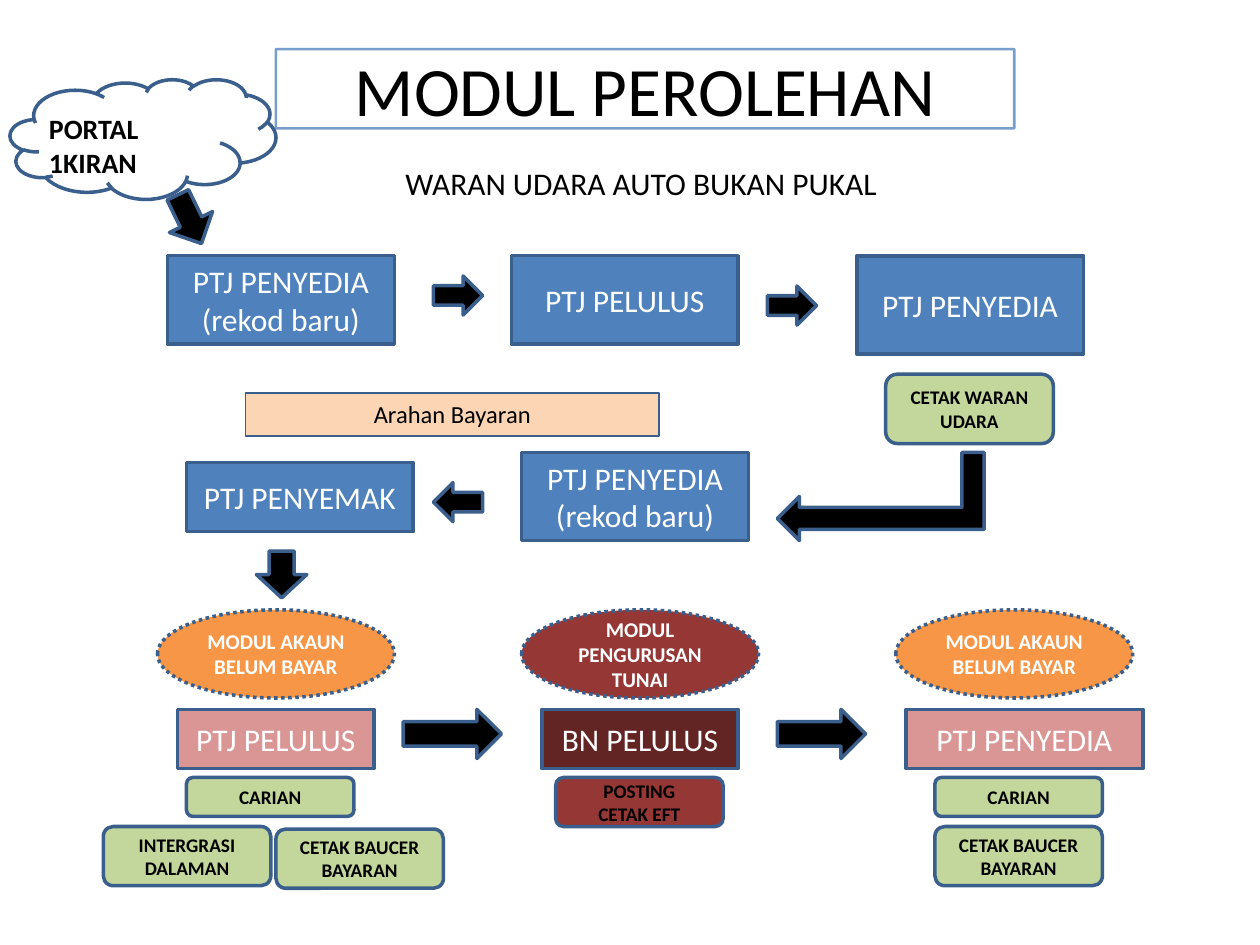
"""Draw the procurement module flow as one slide of boxes and arrows."""
from dataclasses import dataclass
from typing import Optional

from lxml import etree
from pptx import Presentation
from pptx import util as u
from pptx.dml.color import RGBColor
from pptx.enum import dml, shapes, text
from pptx.oxml.ns import qn

SCALE = 9144
KIND = shapes.MSO_SHAPE
MID, TOP = text.MSO_ANCHOR.MIDDLE, text.MSO_ANCHOR.TOP
MAIN, MINI, OVAL = 180, 133, 188


@dataclass(frozen=True)
class Theme:
    font: str = "Calibri"
    black: str = "000000"
    white: str = "FFFFFF"
    edge: str = "3A5F8C"
    blue: str = "4F81BD"
    green: str = "C3D69B"
    peach: str = "FCD5B5"
    pink: str = "D99694"
    orange: str = "F79646"
    red: str = "953735"
    maroon: str = "632523"
    title: float = 39.6
    body: float = 18
    cloud: float = 16
    band: float = 14
    oval: float = 12
    mini: float = 11


T = Theme()


@dataclass(frozen=True)
class Look:
    kind: int
    fill: Optional[str]
    size: float = T.body
    ink: str = T.white
    bold: bool = False
    edge: str = T.edge
    width: float = 2
    dash: Optional[int] = None
    anchor: int = MID


@dataclass(frozen=True)
class Box:
    look: str
    x: int
    y: int
    w: int
    h: int
    words: str = ""


@dataclass(frozen=True)
class Arrow:
    x: int
    y: int
    w: int
    h: int
    turn: float = 0
    kind: int = KIND.RIGHT_ARROW
    flip: bool = False


@dataclass(frozen=True)
class Label:
    x: int
    y: int
    w: int
    h: int
    words: str
    size: float
    bold: bool = False
    wrap: bool = True


def oval(fill: str) -> Look:
    return Look(KIND.OVAL, fill, T.oval, bold=True, dash=dml.MSO_LINE.ROUND_DOT)


def mini(fill: str) -> Look:
    return Look(KIND.ROUNDED_RECTANGLE, fill, T.mini, T.black, True)


LOOKS = {
    "title": Look(KIND.RECTANGLE, None, T.title, T.black, edge=T.blue, width=1.5),
    "band": Look(KIND.RECTANGLE, T.peach, T.band, T.black, width=0.75, anchor=TOP),
    "cloud": Look(KIND.CLOUD, None),
    "arrow": Look(KIND.RIGHT_ARROW, T.black),
    "main": Look(KIND.RECTANGLE, T.blue),
    "pink": Look(KIND.RECTANGLE, T.pink),
    "maroon": Look(KIND.RECTANGLE, T.maroon),
    "orange": oval(T.orange),
    "red": oval(T.red),
    "green": mini(T.green),
    "post": mini(T.red),
}

MAKER, PASSER = "PTJ PENYEDIA", "PTJ PELULUS"
FRESH = f"{MAKER}\n(rekod baru)"
UNPAID = "MODUL AKAUN BELUM BAYAR"
SLIP = "CETAK BAUCER BAYARAN"

BOXES = [
    Box("title", 219, 39, 586, 63, "MODUL PEROLEHAN"),
    Box("main", 133, 203, MAIN, 70, FRESH),
    Box("main", 406, 203, MAIN, 70, PASSER),
    Box("main", 680, 203, MAIN, 78, MAKER),
    Box("green", 703, 297, MINI, 55, "CETAK WARAN UDARA"),
    Box("band", 195, 312, 328, 34, "Arahan Bayaran"),
    Box("main", 148, 367, MAIN, 55, "PTJ PENYEMAK"),
    Box("main", 414, 359, MAIN, 70, FRESH),
    Box("orange", 125, 484, OVAL, 70, UNPAID),
    Box("red", 414, 484, OVAL, 70, "MODUL PENGURUSAN TUNAI"),
    Box("orange", 711, 484, OVAL, 70, UNPAID),
    Box("pink", 141, 563, 156, 47, PASSER),
    Box("maroon", 430, 563, 156, 47, "BN PELULUS"),
    Box("pink", 719, 563, 188, 47, MAKER),
    Box("green", 148, 617, MINI, 31, "CARIAN"),
    Box("post", 441, 617, MINI, 39, "POSTING\nCETAK EFT"),
    Box("green", 742, 617, MINI, 31, "CARIAN"),
    Box("green", 82, 656, MINI, 47, "INTERGRASI DALAMAN"),
    Box("green", 219, 658, MINI, 47, SLIP),
    Box("green", 742, 656, MINI, 47, SLIP),
    Box("cloud", 8, 63, 211, 95),
]
ARROWS = [
    Arrow(129, 155, 43, 38, 64.1),
    Arrow(344, 219, 39, 31),
    Arrow(609, 227, 39, 31),
    Arrow(664, 312, 70, 164, 90, KIND.BENT_UP_ARROW, True),
    Arrow(344, 383, 39, 31, 180),
    Arrow(205, 436, 37, 40, 90),
    Arrow(320, 563, 78, 39),
    Arrow(617, 563, 70, 39),
]
LABELS = [
    Label(312, 125, 414, 40, "WARAN UDARA AUTO BUKAN PUKAL", T.body),
    Label(29, 84, 165, 37, "PORTAL 1KIRAN", T.cloud, True, False),
]


def apply(item, form: dict) -> None:
    for name, value in form.items():
        setattr(item, name, value)


def place(part) -> list[int]:
    return [n * SCALE for n in (part.x, part.y, part.w, part.h)]


def write(frame, words: str, size: float, ink: str, bold: bool, side: int) -> None:
    frame.text = words
    for para in frame.paragraphs:
        para.alignment = side
        apply(para.font, {"name": T.font, "size": u.Pt(size), "bold": bold})
        para.font.color.rgb = RGBColor.from_string(ink)


def paint(shape, look: Look) -> None:
    shape.shadow.inherit = False
    if look.fill:
        shape.fill.solid()
        shape.fill.fore_color.rgb = RGBColor.from_string(look.fill)
    else:
        shape.fill.background()
    shape.line.color.rgb = RGBColor.from_string(look.edge)
    apply(shape.line, {"width": u.Pt(look.width), "dash_style": look.dash})


def draw_box(slide, box: Box):
    look = LOOKS[box.look]
    shape = slide.shapes.add_shape(look.kind, *place(box))
    paint(shape, look)
    if box.words:
        apply(shape.text_frame, {"word_wrap": True, "vertical_anchor": look.anchor})
        write(shape.text_frame, box.words, look.size, look.ink, look.bold,
              text.PP_ALIGN.CENTER)
    return shape


def draw_arrow(slide, arrow: Arrow) -> None:
    shape = slide.shapes.add_shape(arrow.kind, *place(arrow))
    paint(shape, LOOKS["arrow"])
    shape.rotation = arrow.turn
    if arrow.flip:
        shape.element.spPr.find(qn("a:xfrm")).set("flipV", "1")


def draw_label(slide, label: Label) -> None:
    frame = slide.shapes.add_textbox(*place(label)).text_frame
    frame.word_wrap = label.wrap
    write(frame, label.words, label.size, T.black, label.bold, text.PP_ALIGN.LEFT)


def main() -> None:
    deck = Presentation()
    apply(deck, {"slide_width": 1000 * SCALE, "slide_height": 750 * SCALE})
    slide = deck.slides.add_slide(deck.slide_layouts[6])
    drawn = [draw_box(slide, box) for box in BOXES]
    tint = drawn[0].line.color._xFill.find(qn("a:srgbClr"))
    etree.SubElement(tint, qn("a:alpha")).set("val", "76000")
    for arrow in ARROWS:
        draw_arrow(slide, arrow)
    for label in LABELS:
        draw_label(slide, label)
    deck.save("out.pptx")


if __name__ == "__main__":
    main()
